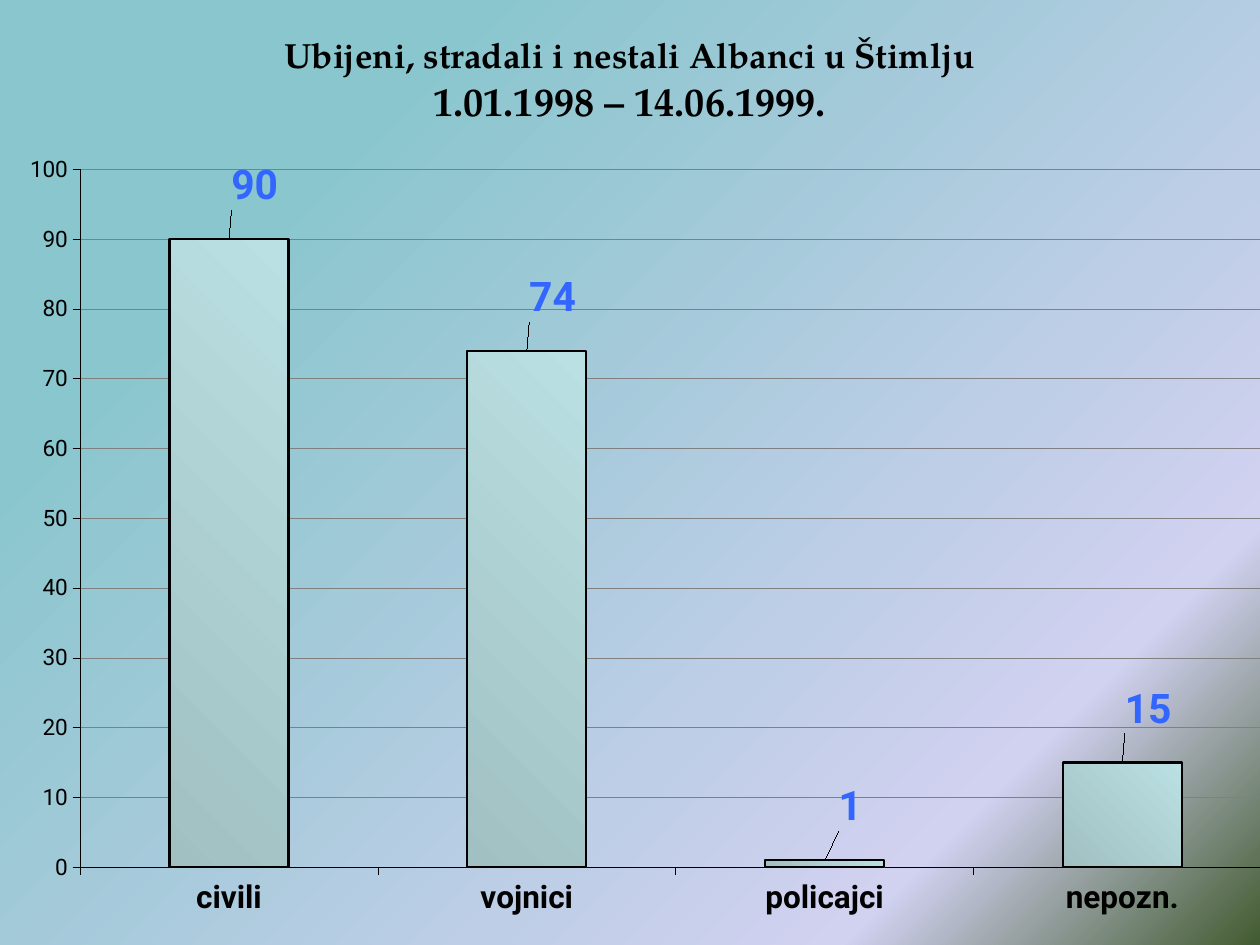
from lxml import etree
from pptx import Presentation
from pptx import util as u
from pptx.chart.data import CategoryChartData
from pptx.dml.color import RGBColor
from pptx.enum import chart as kinds, text
from pptx.oxml import parse_xml
from pptx.oxml.ns import nsdecls, qn

PX = 914400 // 126
THEME = {
    "ink": RGBColor(0, 0, 0),
    "grid": RGBColor(0x80, 0x80, 0x80),
    "label": RGBColor(0x33, 0x66, 0xFF),
    # gradient stops: percent, colour, opacity in percent
    "sky": [(22, "8AC6CD", 100), (81, "D1D1F0", 91), (100, "425B30", 100)],
    "bar": [(0, "A0C0C2", 100), (100, "BBE0E3", 100)],
    "title_font": "TeX Gyre Pagella",
    "chart_font": "Roboto",
    "title": 20, "dates": 23, "labels": 23.3, "categories": 18, "scale": 12.9,
    "hairline": 0.32, "outline": 1.29,
}


def set_gradient(fill, stops, clockwise):
    """Give a fill any number of stops and an angle."""
    fill.gradient()
    fill.gradient_angle = (360 - clockwise) % 360
    stop_list = fill._fill._gradFill.find(qn("a:gsLst"))
    stop_list.clear()
    for percent, colour, opacity in stops:
        stop = etree.SubElement(stop_list, qn("a:gs"), pos=str(percent * 1000))
        shade = etree.SubElement(stop, qn("a:srgbClr"), val=colour)
        if opacity < 100:
            etree.SubElement(shade, qn("a:alpha"), val=str(opacity * 1000))


def manual_layout(**values):
    """Build a chart layout element from its named values."""
    items = "".join(f'<c:{name} val="{value}"/>' for name, value in values.items())
    return parse_xml(f'<c:layout {nsdecls("c")}><c:manualLayout>{items}'
                     '</c:manualLayout></c:layout>')


deck = Presentation()
deck.slide_width, deck.slide_height = 1260 * PX, 945 * PX
page = deck.slides.add_slide(deck.slide_layouts[6])
set_gradient(page.background.fill, THEME["sky"], 45)

# Title
box = page.shapes.add_textbox(0, 0, 1260 * PX, 158 * PX)
frame = box.text_frame
frame.word_wrap = True
frame.vertical_anchor = text.MSO_ANCHOR.MIDDLE
lines = [("Ubijeni, stradali i nestali Albanci u Štimlju", "title"),
         ("1.01.1998 – 14.06.1999.", "dates")]
para = frame.paragraphs[0]
para.alignment = text.PP_ALIGN.CENTER
para.font.name = THEME["title_font"]
para.font.bold = True
para.font.color.rgb = THEME["ink"]
for number, (words, size) in enumerate(lines):
    if number:
        para.add_line_break()
    span = para.add_run()
    span.text = words
    span.font.size = u.Pt(THEME[size])

# Chart
data = CategoryChartData()
data.categories = ["civili", "vojnici", "policajci", "nepozn."]
data.add_series("Series 1", [90, 74, 1, 15])
chart = page.shapes.add_chart(kinds.XL_CHART_TYPE.COLUMN_CLUSTERED,
                              0, 152 * PX, 1292 * PX, 793 * PX, data).chart
chart.has_legend = False
chart.has_title = False
chart.font.name = THEME["chart_font"]
chart.font.size = u.Pt(THEME["labels"])
chart.font.bold = True
chart.font.color.rgb = THEME["ink"]

plot_area = chart._chartSpace.chart.plotArea
for old in plot_area.findall(qn("c:layout")):
    plot_area.remove(old)
plot_area.insert(0, manual_layout(layoutTarget="inner", xMode="edge", yMode="edge",
                                  x=0.062, y=0.022, w=0.922, h=0.88))

# Axes
for axis, size, bold in [(chart.category_axis, "categories", True),
                         (chart.value_axis, "scale", False)]:
    axis.major_tick_mark = kinds.XL_TICK_MARK.OUTSIDE
    axis.minor_tick_mark = kinds.XL_TICK_MARK.NONE
    axis.format.line.color.rgb = THEME["ink"]
    axis.format.line.width = u.Pt(THEME["hairline"])
    font = axis.tick_labels.font
    font.name = THEME["chart_font"]
    font.size = u.Pt(THEME[size])
    font.bold = bold
    font.color.rgb = THEME["ink"]
chart.category_axis.tick_label_position = kinds.XL_TICK_LABEL_POSITION.LOW
scale = chart.value_axis
scale.minimum_scale, scale.maximum_scale, scale.major_unit = 0, 100, 10
scale.has_major_gridlines = True
scale.major_gridlines.format.line.color.rgb = THEME["grid"]
scale.major_gridlines.format.line.width = u.Pt(THEME["hairline"])

# Columns
plot = chart.plots[0]
plot.gap_width = 150
plot.vary_by_categories = False
series = plot.series[0]
set_gradient(series.format.fill, THEME["bar"], 315)
series.format.line.color.rgb = THEME["ink"]
series.format.line.width = u.Pt(THEME["outline"])

# Value labels, moved up and right of the column tops
for index in range(len(series.values)):
    label = series.points[index].data_label
    label.font.name = THEME["chart_font"]
    label.font.size = u.Pt(THEME["labels"])
    label.font.bold = True
    label.font.color.rgb = THEME["label"]
    label.position = kinds.XL_LABEL_POSITION.OUTSIDE_END
for element in series._element.iter(qn("c:dLbl")):
    element.insert(1, manual_layout(x=0.02, y=-0.03))

deck.save("out.pptx")
